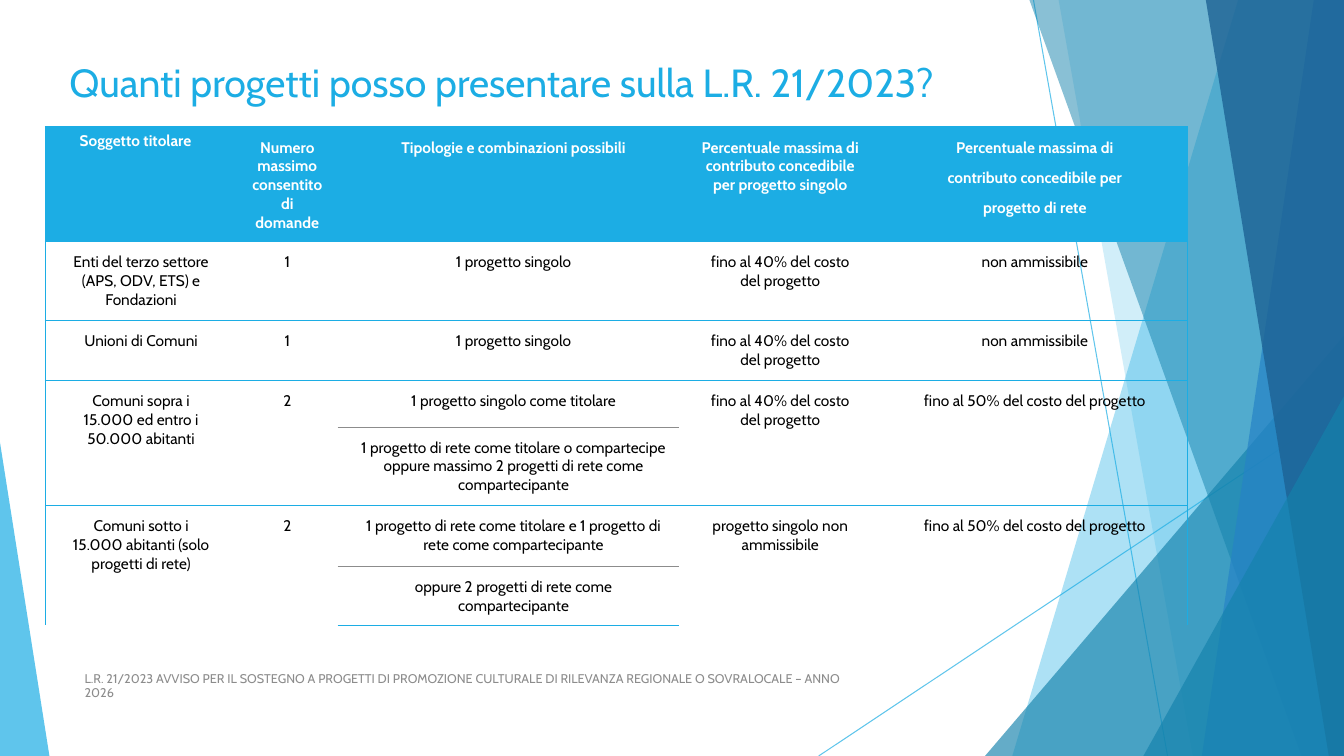
"""Build the slide on how many projects may be submitted under L.R. 21/2023."""
from dataclasses import dataclass

from lxml import etree
from pptx import Presentation
from pptx import util as u
from pptx.dml.color import RGBColor
from pptx.enum import shapes, text
from pptx.oxml import ns


@dataclass(frozen=True)
class Theme:
    """Font, colours and type sizes of the slide."""
    font: str = "Cabin"
    sky: str = "1CADE4"
    teal: str = "1482AC"
    blue: str = "2683C6"
    navy: str = "1D6294"
    white: str = "FFFFFF"
    ink: str = "000000"
    grey: str = "8C8C8C"
    title_size: float = 28
    cell_size: float = 11
    footer_size: float = 9


THEME = Theme()
TITLE = "Quanti progetti posso presentare sulla L.R. 21/2023?"
FOOTER = ("L.R. 21/2023 AVVISO PER IL SOSTEGNO A PROGETTI DI PROMOZIONE CULTURALE "
          "DI RILEVANZA REGIONALE O SOVRALOCALE – ANNO 2026")
COLUMN_WIDTHS = [1.79, 1.11, 3.38, 1.91, 3.14]
ROW_HEIGHTS = [0.97, 0.78, 0.6, 0.46, 0.78, 0.6, 0.53]
TYPES_COLUMN = 2
SPLIT_ROWS = (3, 5)
UP_TO_40 = "fino al 40% del costo del progetto"
UP_TO_50 = "fino al 50% del costo del progetto"
RULES = [
    ["Soggetto titolare", "Numero massimo consentito di domande",
     "Tipologie e combinazioni possibili",
     "Percentuale massima di contributo concedibile per progetto singolo",
     "Percentuale massima di\ncontributo concedibile per\nprogetto di rete"],
    ["Enti del terzo settore (APS, ODV, ETS) e Fondazioni", "1",
     "1 progetto singolo", UP_TO_40, "non ammissibile"],
    ["Unioni di Comuni", "1", "1 progetto singolo", UP_TO_40, "non ammissibile"],
    ["Comuni sopra i 15.000 ed entro i 50.000 abitanti", "2",
     "1 progetto singolo come titolare", UP_TO_40, UP_TO_50],
    [None, None,
     "1 progetto di rete come titolare o compartecipe oppure massimo 2 progetti "
     "di rete come compartecipante", None, None],
    ["Comuni sotto i 15.000 abitanti (solo progetti di rete)", "2",
     "1 progetto di rete come titolare e 1 progetto di rete come compartecipante",
     "progetto singolo non ammissibile", UP_TO_50],
    [None, None, "oppure 2 progetti di rete come compartecipante", None, None],
]


def set_alpha(element, percent):
    """Make the colour inside a shape element partly transparent."""
    for colour in element.spPr.iter(ns.qn("a:srgbClr")):
        etree.SubElement(colour, ns.qn("a:alpha"), val=str(percent * 1000))


def paint(facet, colour, percent):
    """Give a shape a plain translucent fill without outline or shadow."""
    facet.shadow.inherit = False
    facet.fill.solid()
    facet.fill.fore_color.rgb = RGBColor.from_string(colour)
    facet.line.fill.background()
    set_alpha(facet.element, percent)


def add_ray(slide, start, end):
    """Draw a thin translucent line between two points."""
    ray = slide.shapes.add_connector(
        shapes.MSO_CONNECTOR.STRAIGHT, *(u.Inches(v) for v in start + end))
    ray.line.color.rgb = RGBColor.from_string(THEME.sky)
    ray.line.width = u.Pt(0.75)
    set_alpha(ray.element, 70)
    etree.SubElement(ray.element.spPr, ns.qn("a:effectLst"))


def add_band(slide, top_x, bottom_x, colour, percent):
    """Draw a full-height band from a slanted left edge to the slide edge."""
    points = [(u.Inches(x), u.Inches(y)) for x, y in
              ((top_x, 0), (13.33, 0), (13.33, 7.5), (bottom_x, 7.5))]
    builder = slide.shapes.build_freeform(*points[0])
    builder.add_line_segments(points[1:], close=True)
    paint(builder.convert_to_shape(), colour, percent)


def add_triangle(slide, box, apex, colour, percent):
    """Draw a translucent triangle with its apex at the given fraction."""
    triangle = slide.shapes.add_shape(
        shapes.MSO_SHAPE.ISOSCELES_TRIANGLE, *(u.Inches(v) for v in box))
    triangle.adjustments[0] = apex
    paint(triangle, colour, percent)


def add_run(paragraph, wording, size, colour, bold=False):
    """Append one styled run to a paragraph."""
    run = paragraph.add_run()
    run.text = wording
    run.font.name = THEME.font
    run.font.size = u.Pt(size)
    run.font.bold = bold
    run.font.color.rgb = RGBColor.from_string(colour)


def add_label(slide, box, wording, size, colour, anchor):
    """Add a wrapping text box and return its paragraph."""
    frame = slide.shapes.add_textbox(*(u.Inches(v) for v in box)).text_frame
    frame.word_wrap = True
    frame.vertical_anchor = anchor
    add_run(frame.paragraphs[0], wording, size, colour)
    return frame.paragraphs[0]


def set_border(cell, side, colour, width):
    """Set one side of a cell, or clear it when no colour is given."""
    properties = cell._tc.get_or_add_tcPr()
    line = etree.SubElement(properties, ns.qn("a:ln" + side), w=str(u.Pt(width)))
    if colour is None:
        etree.SubElement(line, ns.qn("a:noFill"))
    else:
        fill = etree.SubElement(line, ns.qn("a:solidFill"))
        etree.SubElement(fill, ns.qn("a:srgbClr"), val=colour)


def edge_style(row, column):
    """Return colour and width of the rule above a row in a column."""
    if row - 1 not in SPLIT_ROWS or row == len(RULES):
        return THEME.sky, 1
    return (THEME.grey, 0.5) if column == TYPES_COLUMN else (None, 1)


def style_cell(cell, row, column):
    """Set the borders, fill, margins and anchor of a cell."""
    last_column = len(COLUMN_WIDTHS) - 1
    set_border(cell, "L", THEME.sky if column == 0 else None, 1)
    set_border(cell, "R", THEME.sky if column == last_column else None, 1)
    set_border(cell, "T", *edge_style(row, column))
    set_border(cell, "B", *edge_style(row + 1, column))
    if row == 0:
        cell.fill.solid()
        cell.fill.fore_color.rgb = RGBColor.from_string(THEME.sky)
    else:
        cell.fill.background()
    if (row, column) != (0, 0):
        cell.margin_left = u.Inches(0.22)
        cell.margin_right = cell.margin_top = cell.margin_bottom = u.Inches(0.11)
    is_last = row == len(RULES) - 1 and column == TYPES_COLUMN
    cell.vertical_anchor = text.MSO_ANCHOR.MIDDLE if is_last else text.MSO_ANCHOR.TOP


def write_cell(cell, wording, is_header):
    """Write centred paragraphs into a cell."""
    for index, part in enumerate(wording.split("\n")):
        frame = cell.text_frame
        paragraph = frame.add_paragraph() if index else frame.paragraphs[0]
        paragraph.alignment = text.PP_ALIGN.CENTER
        paragraph.space_after = u.Pt(8)
        add_run(paragraph, part, THEME.cell_size,
                THEME.white if is_header else THEME.ink, is_header)


def add_rules_table(slide):
    """Add the table of applicants, project types and contributions."""
    rules = slide.shapes.add_table(
        len(RULES), len(COLUMN_WIDTHS), u.Inches(0.45), u.Inches(1.26),
        u.Inches(sum(COLUMN_WIDTHS)), u.Inches(sum(ROW_HEIGHTS))).table
    rules.first_row = rules.horz_banding = False
    for column, width in zip(rules.columns, COLUMN_WIDTHS):
        column.width = u.Inches(width)
    for row, height in zip(rules.rows, ROW_HEIGHTS):
        row.height = u.Inches(height)
    for row, wordings in enumerate(RULES):
        for column, wording in enumerate(wordings):
            cell = rules.cell(row, column)
            style_cell(cell, row, column)
            if wording is None:
                rules.cell(row - 1, column).merge(cell)
            else:
                write_cell(cell, wording, row == 0)


def add_backdrop(slide):
    """Draw the faceted decoration on both sides of the slide."""
    add_ray(slide, (10.25, 0), (11.58, 7.5))
    add_ray(slide, (13.33, 4.03), (8.12, 7.5))
    add_band(slide, 12.28, 10.04, THEME.sky, 36)
    add_band(slide, 10.5, 11.83, THEME.sky, 20)
    add_triangle(slide, (9.77, 3.33, 3.56, 4.17), 1, THEME.teal, 66)
    add_band(slide, 10.21, 12.91, THEME.teal, 50)
    add_band(slide, 13.03, 11.92, THEME.blue, 70)
    add_band(slide, 11.96, 13.18, THEME.navy, 80)
    add_triangle(slide, (11.34, 3.93, 1.99, 3.57), 1, THEME.teal, 66)
    add_triangle(slide, (0, 4.39, 0.49, 3.11), 0, THEME.sky, 70)


def main():
    """Build and save the presentation."""
    deck = Presentation()
    deck.slide_width, deck.slide_height = u.Inches(13.33), u.Inches(7.5)
    slide = deck.slides.add_slide(deck.slide_layouts[6])
    add_backdrop(slide)
    add_label(slide, (0.59, 0.53, 9.39, 0.72), TITLE, THEME.title_size,
              THEME.sky, text.MSO_ANCHOR.TOP)
    footer = add_label(slide, (0.74, 6.61, 7.98, 0.4), FOOTER, THEME.footer_size,
                       THEME.grey, text.MSO_ANCHOR.MIDDLE)
    footer.line_spacing = 0.9
    footer.space_after = u.Pt(6)
    add_rules_table(slide)
    deck.save("out.pptx")


if __name__ == "__main__":
    main()
